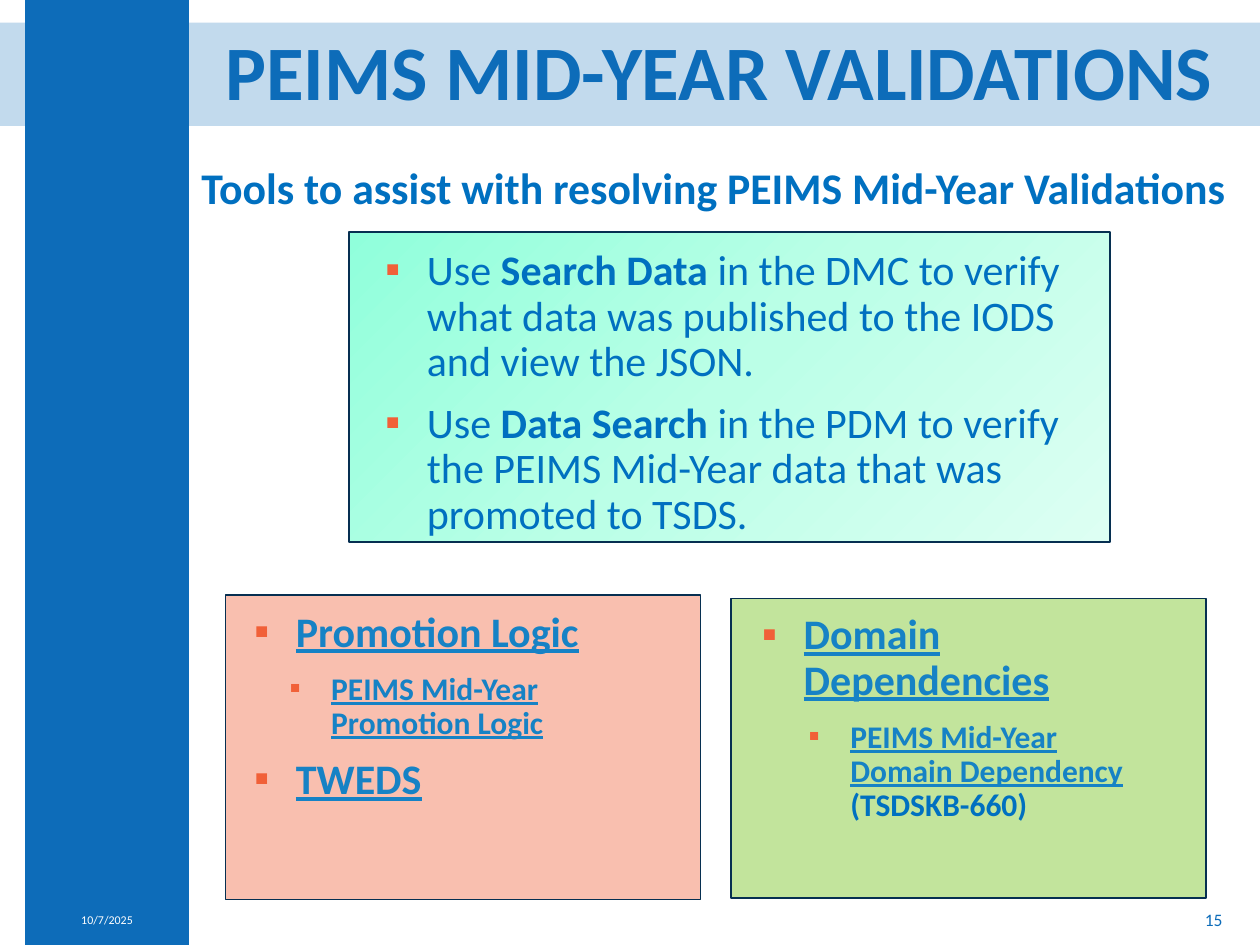
from lxml import etree
from pptx import Presentation
from pptx.dml.color import RGBColor
from pptx.enum.shapes import MSO_SHAPE as Shape
from pptx.enum.text import MSO_ANCHOR as Anchor, PP_ALIGN as Align
from pptx.oxml import parse_xml
from pptx.oxml.ns import nsdecls, qn
from pptx.util import Inches, Pt

# Content
TITLE = "PEIMS MID-YEAR VALIDATIONS"
SUBTITLE = "Tools to assist with resolving PEIMS Mid-Year Validations"
DATE, NUMBER = "10/7/2025", "15"

FONT = "Calibri"
BRAND, TEXT, LINK, BULLET, OUTLINE = "0D6CB9", "0070C0", "1682C5", "F16038", "062F51"
MINT = [(0, "90FFDB"), (50, "BBFFE7"), (100, "DDFFF3")]

# Run styles: bold, underline, colour
STYLES = {
    "plain": (False, False, TEXT),
    "strong": (True, False, TEXT),
    "link": (True, True, LINK),
}

# Each paragraph: left margin, size, runs of (text, style)
SEARCH_TOOLS = [
    (0.66, 24, [("Use", "plain"), (" Search Data ", "strong"),
                ("in the DMC to verify what data was published to the IODS "
                 "and view the JSON.", "plain")]),
    (0.66, 24, [("Use", "plain"), (" Data Search ", "strong"),
                ("in the PDM to verify the PEIMS Mid-Year data that was "
                 "promoted to TSDS.", "plain")]),
]
PROMOTION = [
    (0.66, 24, [("Promotion Logic", "link")]),
    (0.94, 18, [("PEIMS Mid-Year Promotion Logic", "link")]),
    (0.66, 24, [("TWEDS", "link")]),
]
DOMAIN = [
    (0.66, 24, [("Domain Dependencies", "link")]),
    (1.03, 18, [("PEIMS Mid-Year Domain Dependency ", "link"),
                ("(TSDSKB-660)", "strong")]),
]

# Panel place, fill, text place, paragraphs
PANELS = [
    ((1.79, 4.72, 3.77, 2.42), "F9BFAF", (1.59, 4.8, 3.71, 2.53), PROMOTION),
    ((2.77, 1.84, 6.04, 2.46), MINT, (2.63, 1.93, 6.15, 2.38), SEARCH_TOOLS),
    ((5.8, 4.75, 3.77, 2.38), "C2E49C", (5.62, 4.82, 3.71, 2.15), DOMAIN),
]


def color(value):
    return RGBColor.from_string(value)


def inches(place):
    return [Inches(length) for length in place]


def add_rect(place, fill, line=None, alpha=None):
    rect = slide.shapes.add_shape(Shape.RECTANGLE, *inches(place))
    rect.shadow.inherit = False
    if isinstance(fill, list):
        set_gradient(rect, fill)
    else:
        rect.fill.solid()
        rect.fill.fore_color.rgb = color(fill)
    if alpha:
        tint = rect.fill._xPr.find(".//" + qn("a:srgbClr"))
        etree.SubElement(tint, qn("a:alpha"), val=str(alpha * 1000))
    if line:
        rect.line.color.rgb = color(line)
        rect.line.width = Pt(1)
    else:
        rect.line.fill.background()


def set_gradient(shape, stops):
    marks = "".join(f'<a:gs pos="{share * 1000}"><a:srgbClr val="{value}"/></a:gs>'
                    for share, value in stops)
    gradient = parse_xml(f'<a:gradFill {nsdecls("a")} rotWithShape="1"><a:gsLst>{marks}'
                         '</a:gsLst><a:lin ang="2700000" scaled="0"/></a:gradFill>')
    shape._element.spPr.find(qn("a:prstGeom")).addnext(gradient)


def style_span(span, size, bold=False, underline=False, shade=TEXT):
    font = span.font
    font.name, font.size, font.bold = FONT, Pt(size), bold
    font.underline = underline
    font.color.rgb = color(shade)


def add_text_box(place):
    box = slide.shapes.add_textbox(*inches(place))
    box.text_frame.word_wrap = True
    return box.text_frame


def set_line(frame, text, size, shade, align=Align.LEFT, anchor=Anchor.TOP, bold=False):
    frame.text = text
    frame.vertical_anchor = anchor
    para = frame.paragraphs[0]
    para.alignment = align
    style_span(para.runs[0], size, bold, shade=shade)
    return para


def add_bullet(para, margin):
    props = para._p.get_or_add_pPr()
    props.set("marL", str(Inches(margin)))
    props.set("indent", str(Inches(-0.33)))
    tint = etree.SubElement(props, qn("a:buClr"))
    etree.SubElement(tint, qn("a:srgbClr"), val=BULLET)
    etree.SubElement(props, qn("a:buFont"), typeface=FONT)
    etree.SubElement(props, qn("a:buChar"), char="▪")


def add_list(place, items):
    frame = add_text_box(place)
    for index, (margin, size, spans) in enumerate(items):
        para = frame.add_paragraph() if index else frame.paragraphs[0]
        add_bullet(para, margin)
        para.line_spacing = 0.9
        para.space_after = Pt(6.8)
        if index:
            para.space_before = Pt(2.8)
        for text, style in spans:
            span = para.add_run()
            span.text = text
            style_span(span, size, *STYLES[style])


deck = Presentation()
deck.slide_width, deck.slide_height = Inches(10), Inches(7.5)
slide = deck.slides.add_slide(deck.slide_layouts[5])

# Header band and side bar, placed behind the title
add_rect((0, 0.18, 10, 0.82), BRAND, alpha=25)
add_rect((0.2, 0, 1.3, 7.5), BRAND)

# Title
title = slide.shapes.title
title.left, title.top, title.width, title.height = inches((1.66, 0.19, 8.1, 0.82))
title.text_frame.word_wrap = True
heading = set_line(title.text_frame, TITLE, 44, BRAND, Align.CENTER, Anchor.MIDDLE, True)
heading.line_spacing = 0.9
slide.shapes._spTree.append(title._element)

# Panels with their lists
for place, fill, text_place, items in PANELS:
    add_rect(place, fill, OUTLINE)
    add_list(text_place, items)

# Subtitle, date and slide number
set_line(add_text_box((1.5, 1.23, 8.42, 0.52)), SUBTITLE, 25, TEXT, bold=True)
set_line(add_text_box((0.2, 7.1, 1.3, 0.4)), DATE, 6.8, "FFFFFF", Align.CENTER, Anchor.MIDDLE)
set_line(add_text_box((7.55, 7.1, 2.25, 0.4)), NUMBER, 10, BRAND, Align.RIGHT, Anchor.MIDDLE)

deck.save("out.pptx")
